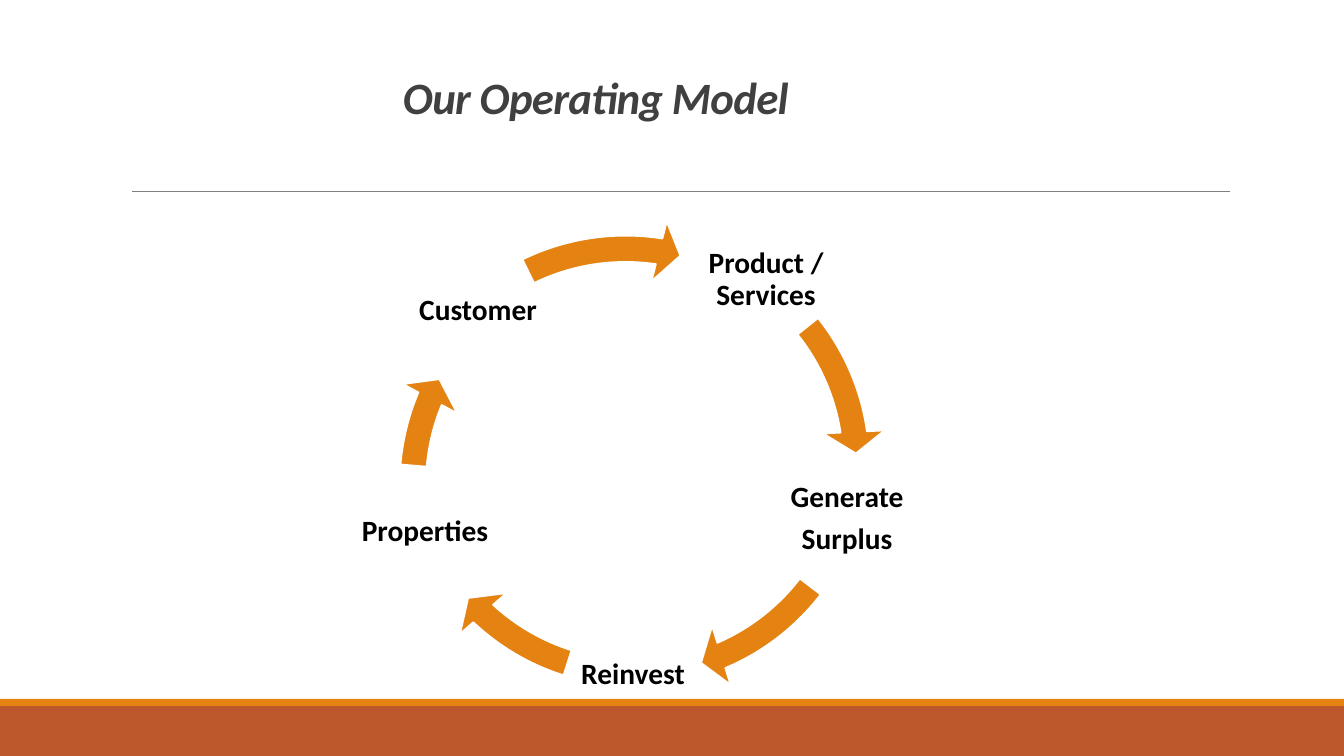
import pptx
import pptx.util
import pptx.dml.color
import pptx.enum.shapes
import pptx.enum.text
import pptx.oxml
import pptx.oxml.ns

SCALE = 914400 / 100.8
SHAPE = pptx.enum.shapes.MSO_SHAPE
ALIGN = pptx.enum.text.PP_ALIGN
ANCHOR = pptx.enum.text.MSO_ANCHOR

STEPS = [
    (["Product / Services"], (341, 44, 134, 90), (24, 21), 321.43, 351.56),
    (["Generate", "Surplus"], (422, 261, 134, 134), (24, 8), 37.54, 66.93),
    (["Reinvest"], (208, 417, 134, 134), (24, 8), 107.58, 133.04),
    (["Properties"], (0, 274, 134, 134), (24, 41), 184.89, 202.77),
    (["Customer"], (53, 53, 134, 134), (15, 27), 243.99, 278.73),
]


def px(n):
    return pptx.util.Emu(round(n * SCALE))


def color(code):
    return pptx.dml.color.RGBColor.from_string(code)


def write(frame, lines, size=21, fill="000000", italic=False, align=ALIGN.CENTER,
          anchor=ANCHOR.MIDDLE, inset=3, leading=0.9, gap=7.5, track=0):
    frame.word_wrap = True
    frame.auto_size = pptx.enum.text.MSO_AUTO_SIZE.NONE
    frame.vertical_anchor = anchor
    frame.margin_left = frame.margin_right = px(inset)
    frame.margin_top = frame.margin_bottom = px(min(inset, 5))
    for i, line in enumerate(lines):
        para = frame.paragraphs[0] if i == 0 else frame.add_paragraph()
        para.alignment = align
        para.line_spacing = leading
        para.space_before = pptx.util.Pt(gap if i else 0)
        run = para.add_run()
        run.text = line
        font = run.font
        font.name = "Calibri"
        font.size = pptx.util.Pt(size)
        font.bold = True
        font.italic = italic
        font.color.rgb = color(fill)
        if track:
            font._element.set("spc", str(track))


def shape(slide, kind, box, fill, edge=None):
    item = slide.shapes.add_shape(kind, *map(px, box))
    item.shadow.inherit = False
    item.fill.solid()
    item.fill.fore_color.rgb = color(fill)
    if edge:
        item.line.color.rgb = color(edge)
        item.line.width = pptx.util.Pt(1.25)
    else:
        item.line.fill.background()
    return item


def footer(slide, box):
    left, top, width, height = box
    shape(slide, SHAPE.RECTANGLE, (left, top + 7, width, height - 7), "BD582C")
    shape(slide, SHAPE.RECTANGLE, (left, top, width, 7), "E48312")


def header(slide, box):
    title = slide.shapes.title
    title.left, title.top, title.width, title.height = map(px, box)
    write(title.text_frame, ["Our Operating Model"], size=32, fill="404040",
          italic=True, align=ALIGN.LEFT, anchor=ANCHOR.BOTTOM, inset=10,
          leading=0.85, track=-50)


def rule(slide, left, top, width):
    line = slide.shapes.add_connector(
        pptx.enum.shapes.MSO_CONNECTOR.STRAIGHT,
        px(left), px(top), px(left + width), px(top))
    line.line.color.rgb = color("808080")
    line.line.width = pptx.util.Pt(0.5)
    line._element.spPr.append(pptx.oxml.parse_xml(
        "<a:effectLst %s/>" % pptx.oxml.ns.nsdecls("a")))


def arrow(slide, box, start, end):
    item = shape(slide, SHAPE.CIRCULAR_ARROW, box, "E48312", "FFFFFF")
    thick, head = 5.2 / 100, 6.1 / 100
    tip, stop, begin = (angle * 0.6 for angle in (5.59, end, start))
    for i, value in enumerate((thick, tip, stop, begin, head)):
        item.adjustments[i] = value


def cycle(slide, left, top):
    for lines, box, spot, start, end in STEPS:
        x, y, width, height = box
        label = slide.shapes.add_textbox(
            *map(px, (left + x, top + y, width, height)))
        write(label.text_frame, lines)
        arrow(slide, (left + spot[0], top + spot[1], 505, 505), start, end)


def main():
    deck = pptx.Presentation()
    deck.slide_width = px(1344)
    deck.slide_height = px(756)
    slide = deck.slides.add_slide(deck.slide_layouts[5])
    footer(slide, (0, 699, 1344, 57))
    rule(slide, 132, 191, 1098)
    header(slide, (393, -31, 1193, 160))
    cycle(slide, 358, 191)
    deck.save("out.pptx")


if __name__ == "__main__":
    main()
